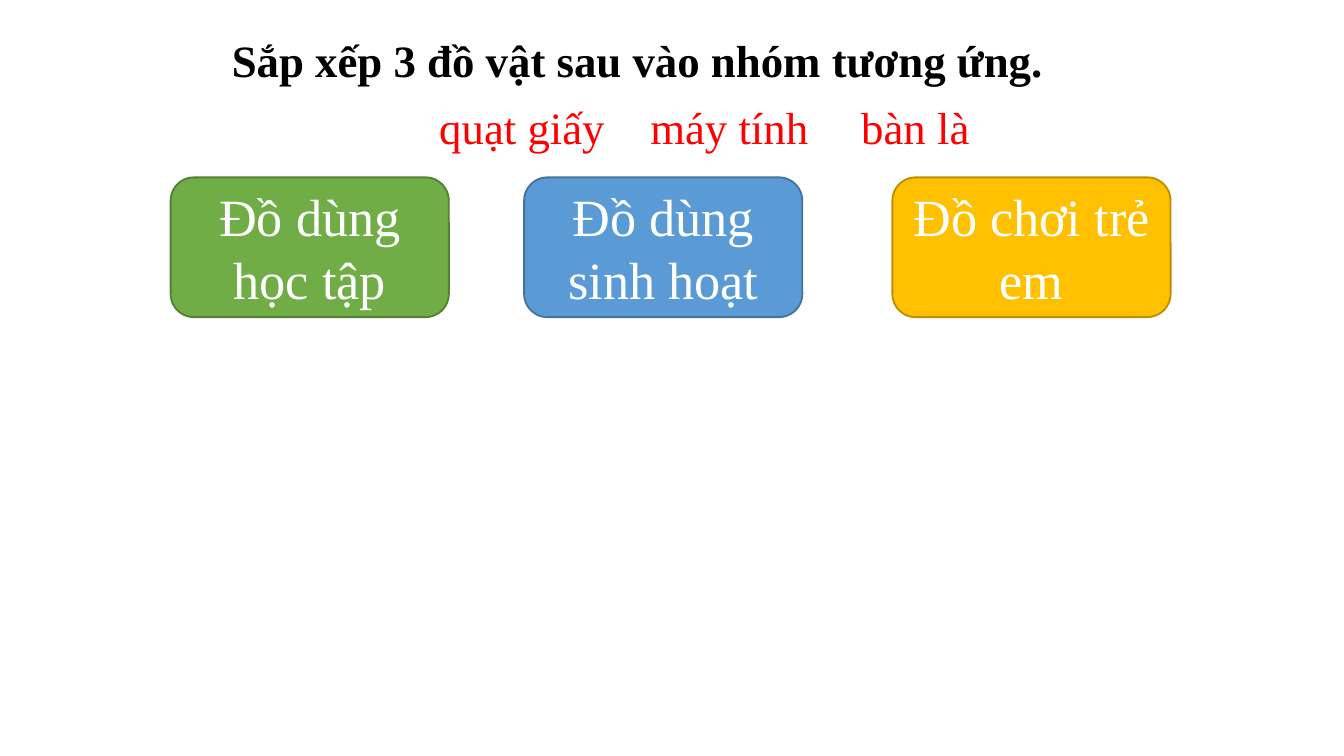
"""Build a Vietnamese sorting exercise with three objects and three groups."""
import pptx
import pptx.dml.color
import pptx.enum.shapes
import pptx.enum.text
import pptx.util

Inches = pptx.util.Inches
RGBColor = pptx.dml.color.RGBColor
ALIGN = pptx.enum.text.PP_ALIGN
ANCHOR = pptx.enum.text.MSO_ANCHOR

BLACK = RGBColor(0x00, 0x00, 0x00)
WHITE = RGBColor(0xFF, 0xFF, 0xFF)
RED = RGBColor(0xFF, 0x00, 0x00)
GREEN = RGBColor(0x70, 0xAD, 0x47)
DARK_GREEN = RGBColor(0x53, 0x80, 0x35)
BLUE = RGBColor(0x5B, 0x9B, 0xD5)
DARK_BLUE = RGBColor(0x43, 0x73, 0x9E)
GOLD = RGBColor(0xFF, 0xC0, 0x00)
DARK_GOLD = RGBColor(0xBD, 0x8E, 0x00)


def write_text(shape, text, size, color, align, anchor, bold=False):
    frame = shape.text_frame
    frame.text = text
    frame.word_wrap = True
    frame.auto_size = pptx.enum.text.MSO_AUTO_SIZE.NONE
    frame.vertical_anchor = anchor
    para = frame.paragraphs[0]
    para.alignment = align
    font = para.runs[0].font
    font.name = "Times New Roman"
    font.size = pptx.util.Pt(size)
    font.bold = bold
    font.color.rgb = color


deck = pptx.Presentation()
deck.slide_width = Inches(10)
deck.slide_height = Inches(10 * 9 / 16)
page = deck.slides.add_slide(deck.slide_layouts.get_by_name("Title Only"))

title = page.shapes.title
title.left, title.top = Inches(0.52), Inches(0.19)
title.width, title.height = Inches(8.44), Inches(0.5)
write_text(title, "Sắp xếp 3 đồ vật sau vào nhóm tương ứng.", 24, BLACK,
           ALIGN.CENTER, ANCHOR.TOP, bold=True)

groups = [
    ("Đồ dùng học tập", 1.27, GREEN, DARK_GREEN),
    ("Đồ dùng sinh hoạt", 3.9, BLUE, DARK_BLUE),
    ("Đồ chơi trẻ em", 6.64, GOLD, DARK_GOLD),
]
for name, left, fill_color, line_color in groups:
    box = page.shapes.add_shape(
        pptx.enum.shapes.MSO_SHAPE.ROUNDED_RECTANGLE,
        Inches(left), Inches(1.32), Inches(2.07), Inches(1.04))
    box.shadow.inherit = False
    box.fill.solid()
    box.fill.fore_color.rgb = fill_color
    box.line.color.rgb = line_color
    box.line.width = pptx.util.Pt(1)
    write_text(box, name, 28, WHITE, ALIGN.CENTER, ANCHOR.MIDDLE)

for index, item in enumerate(["quạt giấy", "máy tính", "bàn là"]):
    label = page.shapes.add_textbox(
        Inches(3.17 + 1.57 * index), Inches(0.69), Inches(1.74), Inches(0.5))
    write_text(label, item, 24, RED, ALIGN.LEFT, ANCHOR.TOP)

deck.save("out.pptx")
